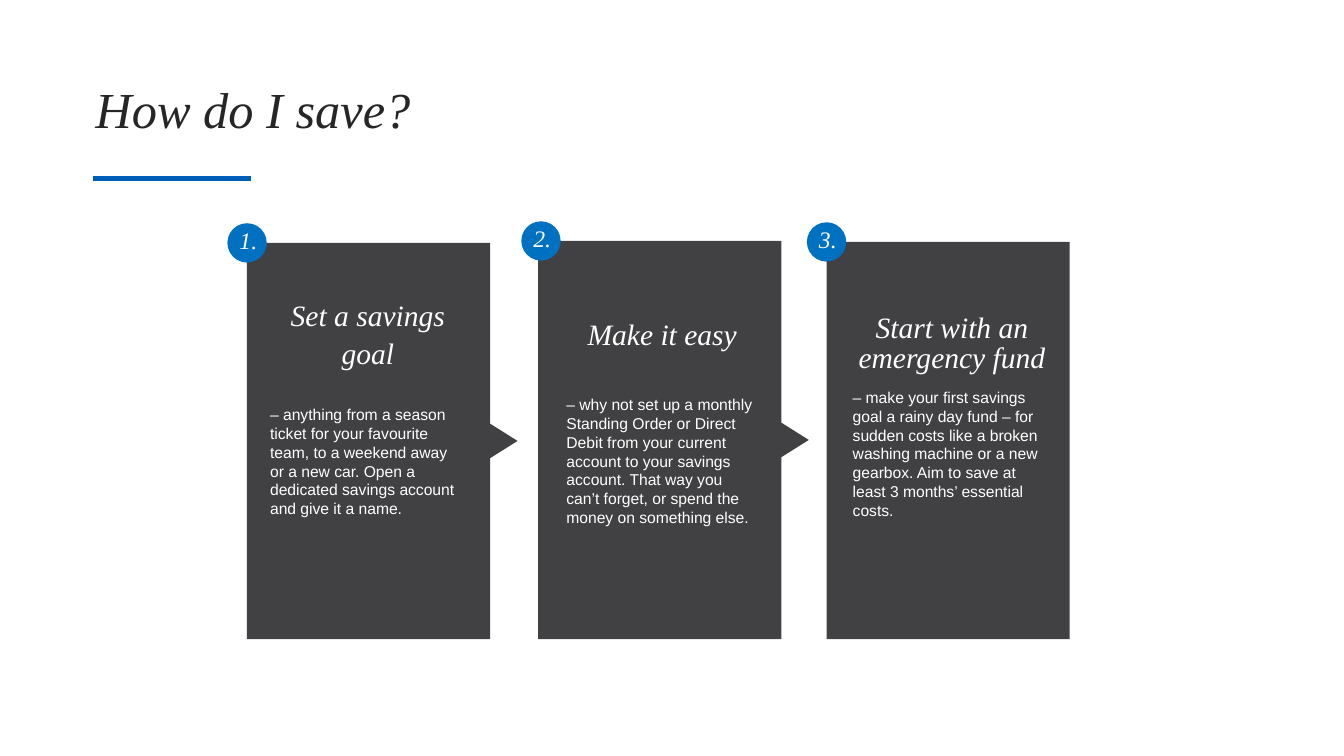
from lxml import etree
from pptx import Presentation
from pptx.dml.color import RGBColor
from pptx.enum.shapes import MSO_CONNECTOR, MSO_SHAPE
from pptx.enum.text import MSO_ANCHOR, PP_ALIGN
from pptx.oxml.ns import qn
from pptx.util import Inches, Pt

STRAIGHT = MSO_CONNECTOR.STRAIGHT
RECT, OVAL = MSO_SHAPE.RECTANGLE, MSO_SHAPE.OVAL
LEFT, CENTER = PP_ALIGN.LEFT, PP_ALIGN.CENTER
TOP, MIDDLE = MSO_ANCHOR.TOP, MSO_ANCHOR.MIDDLE

W, H = Inches(13.33), Inches(7.5)
SERIF, SANS = "Times New Roman", "Arial"
WHITE, INK, DARK, BLUE, RULE = "FFFFFF", "262626", "414042", "0070C0", "005EB8"

CARD_W, CARD_BOTTOM = 18.1, 84.53
ARROW_W, ARROW_HALF = 2.03, 2.27
BADGE = Inches(0.39)


def color(hex_code):
    return RGBColor.from_string(hex_code)


def px(share):
    return round(W * share / 100)


def py(share):
    return round(H * share / 100)


def paint(sp, fill):
    sp.shadow.inherit = False
    sp.fill.solid()
    sp.fill.fore_color.rgb = color(fill)
    sp.line.fill.background()


def para(text, size, font, rgb=WHITE, align=LEFT, spacing=None, before=0):
    return text, size, font, rgb, align, spacing, before


def heading(text, spacing=1.06):
    return para(text, 21.1, SERIF, align=CENTER, spacing=spacing)


def body(text, before=0):
    return para(text, 11.2, SANS, spacing=Pt(13.4), before=before)


def add_text(s, box, paras, anchor=TOP, wrap=True):
    tf = s.shapes.add_textbox(*box).text_frame
    tf.word_wrap = wrap
    tf.vertical_anchor = anchor
    tf.margin_left = tf.margin_right = tf.margin_top = tf.margin_bottom = 0
    for i, (text, size, font, rgb, align, spacing, before) in enumerate(paras):
        p = tf.add_paragraph() if i else tf.paragraphs[0]
        p.alignment = align
        if spacing:
            p.line_spacing = spacing
        if before:
            p.space_before = Pt(before)
        r = p.add_run()
        r.text = text
        r.font.size = Pt(size)
        r.font.name = font
        r.font.italic = font == SERIF
        r.font.color.rgb = color(rgb)


def area(x, y, w, h):
    return px(x), py(y), px(w), py(h)


def add_card(s, x, y, arrow):
    if not arrow:
        paint(s.shapes.add_shape(RECT, *area(x, y, CARD_W, CARD_BOTTOM - y)), DARK)
        return
    right, mid = x + CARD_W, (y + CARD_BOTTOM) / 2
    outline = [(right, y), (x, y), (x, CARD_BOTTOM), (right, CARD_BOTTOM),
               (right, mid + ARROW_HALF), (right + ARROW_W, mid),
               (right, mid - ARROW_HALF)]
    points = [(px(a), py(b)) for a, b in outline]
    fb = s.shapes.build_freeform(*points[0], scale=1.0)
    fb.add_line_segments(points[1:], close=True)
    paint(fb.convert_to_shape(), DARK)


def add_badge(s, x, y, label):
    left, top = px(x) - BADGE // 2, py(y) - BADGE // 2
    paint(s.shapes.add_shape(OVAL, left, top, BADGE, BADGE), BLUE)
    box = left + Inches(0.12), top + Inches(0.03), Inches(0.19), Inches(0.28)
    add_text(s, box, [para(label, 16.9, SERIF)], wrap=False)


def add_rule(s, x1, x2, y):
    line = s.shapes.add_connector(STRAIGHT, px(x1), py(y), px(x2), py(y))
    line.line.color.rgb = color(RULE)
    line.line.width = Pt(4)
    etree.SubElement(line._element.spPr, qn("a:effectLst"))


def main():
    prs = Presentation()
    prs.slide_width, prs.slide_height = W, H
    s = prs.slides.add_slide(prs.slide_layouts[6])

    add_rule(s, 6.9, 18.7, 23.6)
    add_text(s, area(7.1, 10.27, 63.45, 8.13),
             [para("How do I save?", 36, SERIF, INK)], MIDDLE)

    goal = ("– anything from a season ticket for your favourite team, to a weekend "
            "away or a new car. Open a dedicated savings account and give it a name.")
    easy = ("– why not set up a monthly Standing Order or Direct Debit from your "
            "current account to your savings account. That way you can’t forget, "
            "or spend the money on something else.")
    fund = ("– make your first savings goal a rainy day fund – for sudden costs like "
            "a broken washing machine or a new gearbox. Aim to save at least "
            "3 months’ essential costs.")
    cards = [
        (18.38, 32.13, True, 18.38, "1.", [
            (area(20.4, 39.07, 13.95, 9.47), [heading("Set a savings goal")]),
            (area(20.1, 53.6, 13.95, 14.53), [body(goal)])]),
        (40.05, 31.87, True, 40.25, "2.", [
            (area(42.08, 41.47, 14.4, 4.67), [heading("Make it easy")]),
            (area(42.15, 52.27, 14.33, 17.07), [body(easy)])]),
        (61.5, 32, False, 61.5, "3.", [
            (area(63.45, 41.47, 14.78, 27.07),
             [heading("Start with an emergency fund", Pt(21.8)), body(fund, 9.6)])]),
    ]
    for x, y, arrow, badge_x, label, texts in cards:
        add_card(s, x, y, arrow)
        for box, paras in texts:
            add_text(s, box, paras)
        add_badge(s, badge_x, y, label)

    prs.save("out.pptx")


if __name__ == "__main__":
    main()
